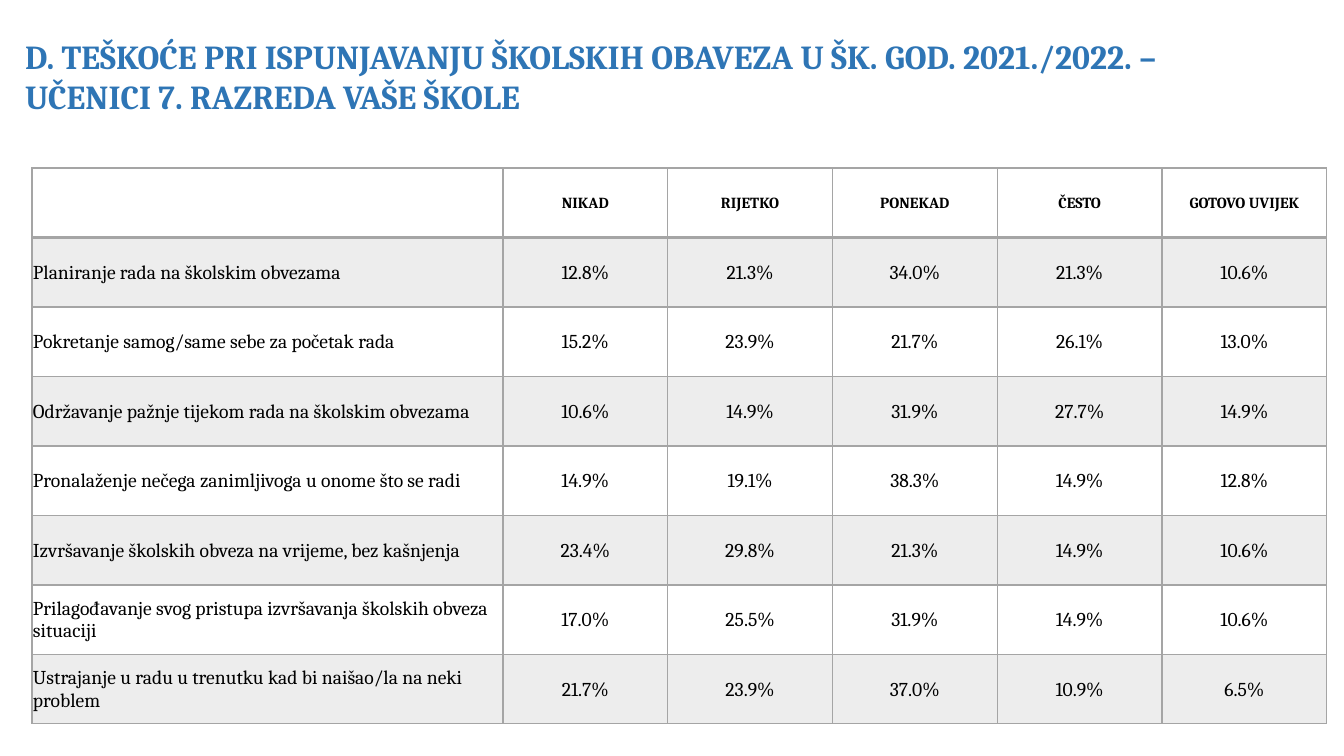
from lxml.etree import SubElement
from pptx import Presentation
from pptx.dml.color import RGBColor
from pptx.enum.text import MSO_ANCHOR, MSO_AUTO_SIZE, PP_ALIGN
from pptx.oxml.ns import qn
from pptx.util import Emu, Pt

PX = 12192000 / 1344
FONT = "Cambria"
BLUE = RGBColor(0x2E, 0x75, 0xB5)
BLACK = RGBColor(0x00, 0x00, 0x00)
WHITE = RGBColor(0xFF, 0xFF, 0xFF)
BAND = RGBColor(0xED, 0xED, 0xED)
BORDER = RGBColor(0xA5, 0xA5, 0xA5)

TITLE = ("D. TEŠKOĆE PRI ISPUNJAVANJU ŠKOLSKIH OBAVEZA U ŠK. GOD. 2021./2022. – "
         "UČENICI 7. RAZREDA VAŠE ŠKOLE")
ROWS = [
    ("", "NIKAD", "RIJETKO", "PONEKAD", "ČESTO", "GOTOVO UVIJEK"),
    ("Planiranje rada na školskim obvezama",
     "12.8%", "21.3%", "34.0%", "21.3%", "10.6%"),
    ("Pokretanje samog/same sebe za početak rada",
     "15.2%", "23.9%", "21.7%", "26.1%", "13.0%"),
    ("Održavanje pažnje tijekom rada na školskim obvezama",
     "10.6%", "14.9%", "31.9%", "27.7%", "14.9%"),
    ("Pronalaženje nečega zanimljivoga u onome što se radi",
     "14.9%", "19.1%", "38.3%", "14.9%", "12.8%"),
    ("Izvršavanje školskih obveza na vrijeme, bez kašnjenja",
     "23.4%", "29.8%", "21.3%", "14.9%", "10.6%"),
    ("Prilagođavanje svog pristupa izvršavanja školskih obveza situaciji",
     "17.0%", "25.5%", "31.9%", "14.9%", "10.6%"),
    ("Ustrajanje u radu u trenutku kad bi naišao/la na neki problem",
     "21.7%", "23.9%", "37.0%", "10.9%", "6.5%"),
]


def px(n):
    return Emu(round(n * PX))


def add_border(cell, side, width):
    ln = SubElement(cell._tc.get_or_add_tcPr(), qn("a:" + side), w=str(Pt(width)))
    fill = SubElement(ln, qn("a:solidFill"))
    SubElement(fill, qn("a:srgbClr"), val=str(BORDER))


prs = Presentation()
prs.slide_width, prs.slide_height = px(1344), px(756)
s = prs.slides.add_slide(prs.slide_layouts[5])

# Title
title = s.shapes.title
title.left, title.top, title.width, title.height = px(15), px(31), px(1258), px(92)
tf = title.text_frame
tf.text = TITLE
tf.word_wrap = True
tf.auto_size = MSO_AUTO_SIZE.NONE
tf.vertical_anchor = MSO_ANCHOR.TOP
p = tf.paragraphs[0]
p.alignment = PP_ALIGN.LEFT
font = p.runs[0].font
font.name, font.size, font.bold = FONT, Pt(24), True
font.color.rgb = BLUE

# Table grid
table = s.shapes.add_table(len(ROWS), len(ROWS[0]),
                           px(32), px(168), px(1295), px(556)).table
table.first_row = table.horz_banding = False
for i, column in enumerate(table.columns):
    column.width = px(471) if i == 0 else px(824) // 5
for row in table.rows:
    row.height = px(556) // len(ROWS)

# Table cells
for i, values in enumerate(ROWS):
    for j, value in enumerate(values):
        cell = table.cell(i, j)
        for side in ("lnL", "lnR", "lnT", "lnB"):
            under_header = (i, side) in ((0, "lnB"), (1, "lnT"))
            add_border(cell, side, 2 if under_header else 1)
        cell.fill.solid()
        cell.fill.fore_color.rgb = BAND if i % 2 else WHITE
        cell.vertical_anchor = MSO_ANCHOR.MIDDLE
        cell.margin_left = cell.margin_right = cell.margin_top = px(1)
        cell.margin_bottom = 0
        cell.text = value
        p = cell.text_frame.paragraphs[0]
        p.alignment = PP_ALIGN.CENTER if j else PP_ALIGN.LEFT
        for r in p.runs:
            r.font.name, r.font.bold = FONT, i == 0
            r.font.size = Pt(14 if i else 11)
            r.font.color.rgb = BLACK

prs.save("out.pptx")
